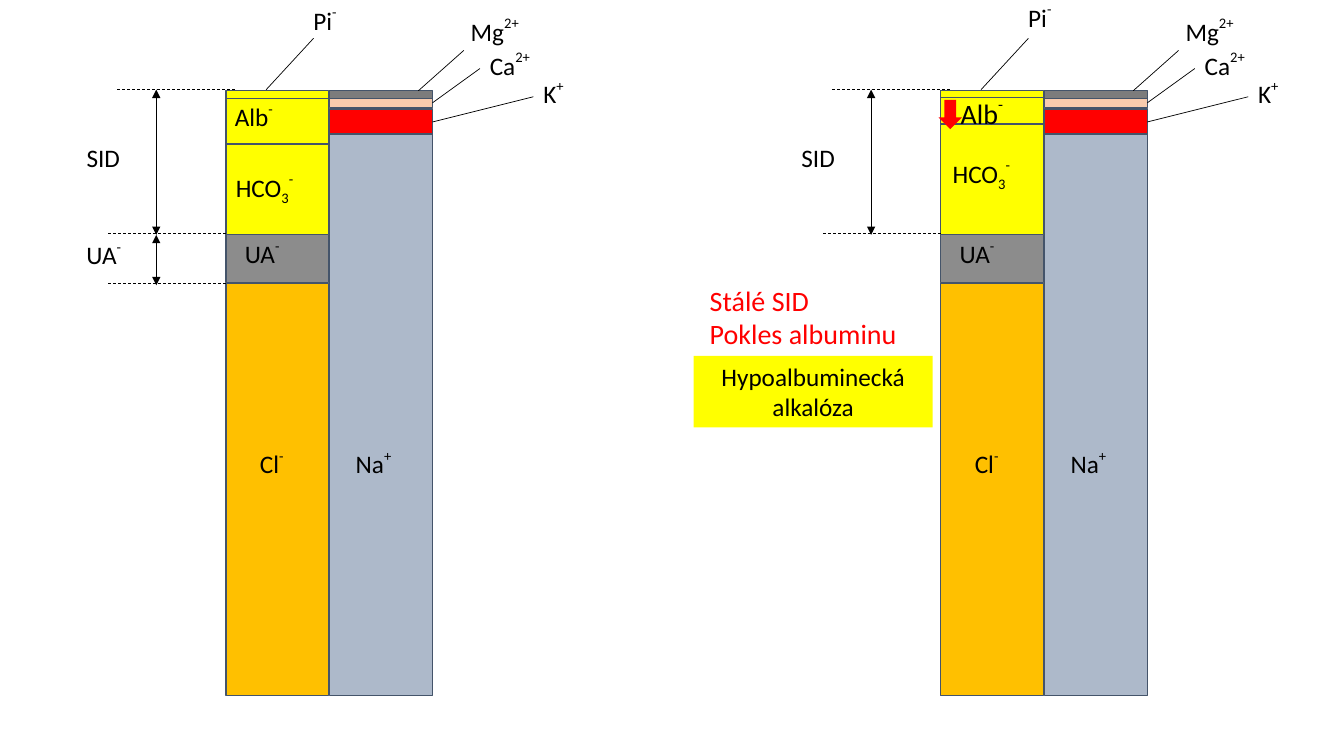
from lxml import etree
from pptx import Presentation
from pptx.dml.color import RGBColor
from pptx.enum.dml import MSO_LINE
from pptx.enum.shapes import MSO_CONNECTOR, MSO_SHAPE
from pptx.enum.text import MSO_ANCHOR, MSO_AUTO_SIZE, PP_ALIGN
from pptx.oxml.ns import qn
from pptx.util import Inches, Pt

RECT, DOWN_ARROW = MSO_SHAPE.RECTANGLE, MSO_SHAPE.DOWN_ARROW
STRAIGHT, DASH = MSO_CONNECTOR.STRAIGHT, MSO_LINE.DASH
FIT, CENTER, MIDDLE = MSO_AUTO_SIZE.SHAPE_TO_FIT_TEXT, PP_ALIGN.CENTER, MSO_ANCHOR.MIDDLE

BLACK, RED, YELLOW, OUTLINE = "000000", "FF0000", "FFFF00", "44546A"
FONT = "Calibri"
SUBSCRIPT, SUPERSCRIPT = -25000, 50000

# Positions are given for the left gamblegram; the right one is shifted.
BAR_WIDTH = 1.02
ANIONS_X, CATIONS_X = 2.24, 3.27
PANEL_SHIFT = 7.09

# Bars: left, top, height, fill
SHARED_BARS = [
    (CATIONS_X, 1.33, 5.57, "ADB9CA"),
    (CATIONS_X, 1.08, 0.25, RED),
    (CATIONS_X, 0.96, 0.11, "F8CBAD"),
    (CATIONS_X, 0.9, 0.08, "7C7C7C"),
    (ANIONS_X, 2.81, 4.09, "FFC000"),
    (ANIONS_X, 0.9, 0.1, YELLOW),
    (ANIONS_X, 2.32, 0.48, "8C8C8C"),
]
# Labels: symbol, subscript, charge, left, top, width, size
SHARED_LABELS = [
    ("Mg", "", "2+", 4.57, 0.09, 0.91, 18),
    ("Ca", "", "2+", 4.76, 0.43, 0.81, 18),
    ("K", "", "+", 5.29, 0.71, 0.57, 18),
    ("Na", "", "+", 3.43, 4.38, 0.72, 18),
    ("Cl", "", "-", 2.48, 4.38, 0.59, 18),
    ("UA", "", "-", 2.33, 2.3, 0.76, 18),
    ("SID", "", "", 0.76, 1.36, 0.75, 18),
]
# Lines: start x, start y, end x, end y
LEADERS = [
    (4.6, 0.5, 4.15, 0.9),
    (4.76, 0.68, 4.29, 1.02),
    (5.29, 0.96, 4.29, 1.21),
    (2.64, 0.89, 3.11, 0.38),
]
SID_LIMITS = [(2.24, 2.32, 1.06, 2.32), (2.33, 0.89, 1.15, 0.89)]
SID_SPAN = (1.55, 0.89, 1.55, 2.33)

PANELS = [
    {
        "shift": 0,
        "bars": [(ANIONS_X, 1.43, 0.9, YELLOW), (ANIONS_X, 0.98, 0.45, YELLOW)],
        "labels": [
            ("Pi", "", "-", 3.01, -0.02, 0.56, 18),
            ("HCO", "3", "-", 2.24, 1.64, 1.1, 18),
            ("Alb", "", "-", 2.23, 0.94, 0.78, 18),
            ("UA", "", "-", 0.76, 2.31, 0.76, 18),
        ],
        "limits": SID_LIMITS + [(2.24, 2.81, 1.06, 2.81)],
        "spans": [SID_SPAN, (1.55, 2.33, 1.55, 2.83)],
    },
    {
        "shift": PANEL_SHIFT,
        "bars": [(ANIONS_X, 1.23, 1.1, YELLOW), (ANIONS_X, 0.97, 0.26, YELLOW)],
        "labels": [
            ("Pi", "", "-", 3.01, -0.05, 0.56, 18),
            ("HCO", "3", "-", 2.26, 1.5, 1.1, 18),
            ("Alb", "", "-", 2.34, 0.89, 0.69, 20),
        ],
        "limits": SID_LIMITS,
        "spans": [SID_SPAN],
    },
]
FINDINGS = "Stálé SID\nPokles albuminu"
DIAGNOSIS = "Hypoalbuminecká alkalóza"

prs = Presentation()
prs.slide_width, prs.slide_height = Inches(13.33), Inches(7.5)
slide = prs.slides.add_slide(prs.slide_layouts[6])


def rgb(value):
    return RGBColor.from_string(value)


def format_run(run, size, color):
    run.font.name, run.font.size = FONT, Pt(size)
    run.font.color.rgb = rgb(color)


def add_block(kind, x, y, width, height, fill, outline=None):
    block = slide.shapes.add_shape(kind, Inches(x), Inches(y), Inches(width), Inches(height))
    block.shadow.inherit = False
    block.fill.solid()
    block.fill.fore_color.rgb = rgb(fill)
    if outline:
        block.line.color.rgb = rgb(outline)
        block.line.width = Pt(1)
    else:
        block.line.fill.background()
    return block


def add_text_frame(x, y, width, height):
    frame = slide.shapes.add_textbox(Inches(x), Inches(y), Inches(width), Inches(height)).text_frame
    frame.word_wrap, frame.auto_size = False, FIT
    return frame


def add_ion_label(symbol, subscript, charge, x, y, width, size):
    paragraph = add_text_frame(x, y, width, 0.5).paragraphs[0]
    for part, baseline in ((symbol, 0), (subscript, SUBSCRIPT), (charge, SUPERSCRIPT)):
        if part:
            run = paragraph.add_run()
            run.text = part
            format_run(run, size, BLACK)
            if baseline:
                run.font._element.set("baseline", str(baseline))


def add_line(x1, y1, x2, y2, dashed=False, arrows=False):
    line = slide.shapes.add_connector(STRAIGHT, Inches(x1), Inches(y1), Inches(x2), Inches(y2))
    line.line.color.rgb = rgb(BLACK)
    line.line.width = Pt(0.5)
    if dashed:
        line.line.dash_style = DASH
    if arrows:
        for end in ("a:headEnd", "a:tailEnd"):
            etree.SubElement(line.line._get_or_add_ln(), qn(end), type="triangle")
    etree.SubElement(line._element.spPr, qn("a:effectLst"))


def add_panel(panel):
    shift = panel["shift"]
    for x, y, height, fill in SHARED_BARS + panel["bars"]:
        add_block(RECT, x + shift, y, BAR_WIDTH, height, fill, OUTLINE)
    for symbol, subscript, charge, x, y, width, size in SHARED_LABELS + panel["labels"]:
        add_ion_label(symbol, subscript, charge, x + shift, y, width, size)
    for lines, style in (
        (LEADERS, {}),
        (panel["limits"], {"dashed": True}),
        (panel["spans"], {"arrows": True}),
    ):
        for x1, y1, x2, y2 in lines:
            add_line(x1 + shift, y1, x2 + shift, y2, **style)


for panel in PANELS:
    add_panel(panel)

diagnosis = add_block(RECT, 6.88, 3.53, 2.37, 0.71, YELLOW).text_frame
diagnosis.text = DIAGNOSIS
diagnosis.word_wrap, diagnosis.auto_size = True, FIT
diagnosis.vertical_anchor = MIDDLE
diagnosis.paragraphs[0].alignment = CENTER
format_run(diagnosis.paragraphs[0].runs[0], 18, BLACK)

findings = add_text_frame(6.94, 2.76, 2.08, 0.77)
findings.text = FINDINGS
for paragraph in findings.paragraphs:
    format_run(paragraph.runs[0], 20, RED)

add_block(DOWN_ARROW, 9.31, 0.99, 0.23, 0.29, RED)

prs.save("out.pptx")
